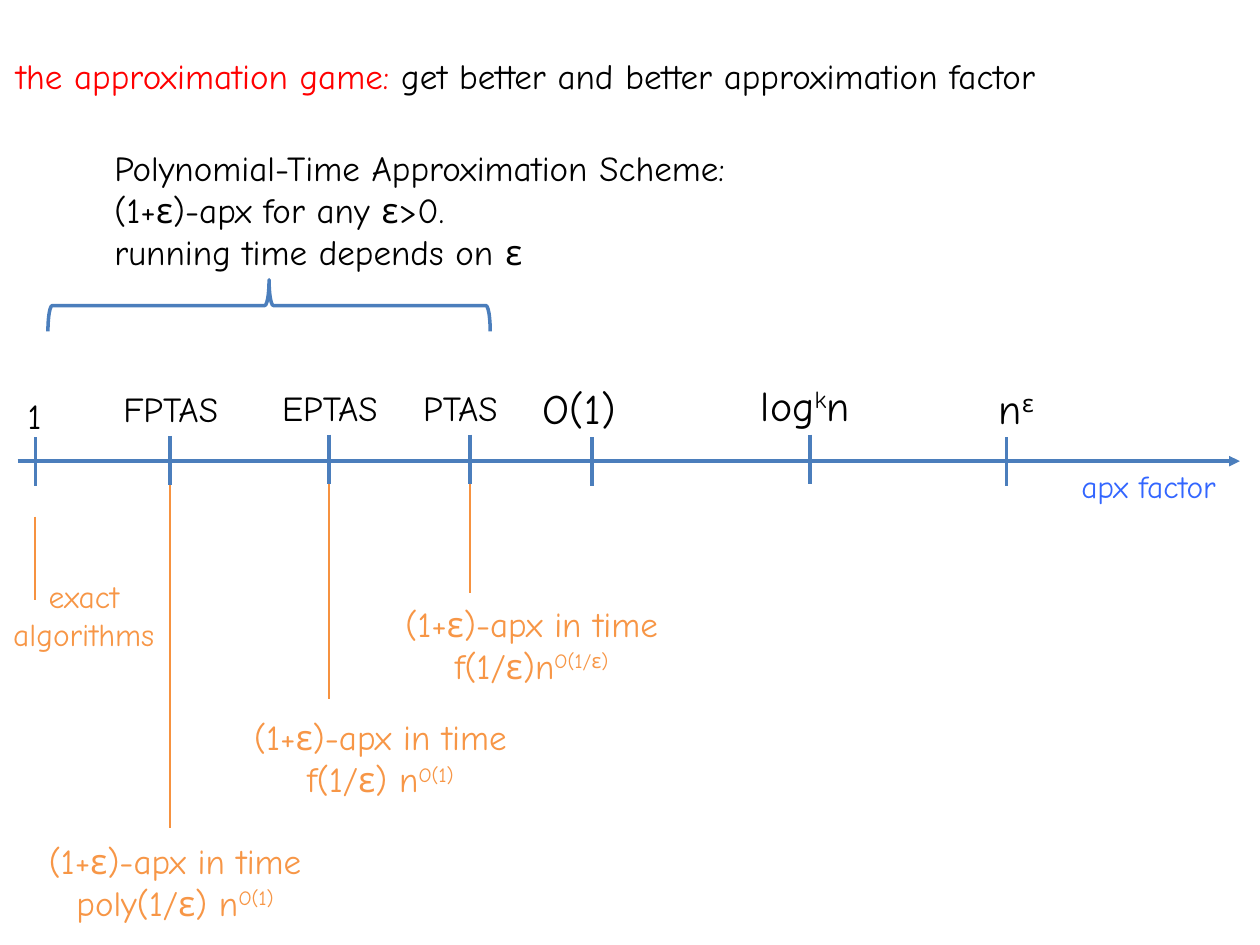
from lxml import etree
from pptx import Presentation
from pptx.dml.color import RGBColor
from pptx.enum.shapes import MSO_CONNECTOR, MSO_SHAPE
from pptx.enum.text import MSO_AUTO_SIZE, PP_ALIGN
from pptx.oxml.ns import qn
from pptx.util import Inches, Pt

FONT = "Comic Neue"
BLACK, RED, BLUE = "000000", "FF0000", "3366FF"
ORANGE, STEM, AXIS = "F79646", "F69240", "4B7EBC"
AXIS_Y = 3.66


def color(hex_string):
    return RGBColor.from_string(hex_string)


class SlideBuilder:
    def __init__(self, page):
        self.page = page

    def add_span(self, para, text, size, hex_string, raised=False):
        span = para.add_run()
        span.text = text
        span.font.name = FONT
        span.font.size = Pt(size)
        span.font.color.rgb = color(hex_string)
        if raised:
            span._r.get_or_add_rPr().set("baseline", "30000")

    def text(self, left, top, width, height, content, size=20,
             hex_string=BLACK, centered=False):
        """Add a text box; every second part between ^ marks is superscript."""
        box = self.page.shapes.add_textbox(
            Inches(left), Inches(top), Inches(width), Inches(height))
        frame = box.text_frame
        frame.word_wrap = True
        frame.auto_size = MSO_AUTO_SIZE.SHAPE_TO_FIT_TEXT
        for index, line in enumerate(content.split("\n")):
            para = frame.paragraphs[0] if index == 0 else frame.add_paragraph()
            para.alignment = PP_ALIGN.CENTER if centered else PP_ALIGN.LEFT
            for part, text in enumerate(line.split("^")):
                if text:
                    self.add_span(para, text, size, hex_string, part % 2 == 1)
        return box

    def line(self, start, end, hex_string=AXIS, width=2, arrow=False):
        connector = self.page.shapes.add_connector(
            MSO_CONNECTOR.STRAIGHT, *(Inches(value) for value in start + end))
        connector.line.color.rgb = color(hex_string)
        connector.line.width = Pt(width)
        if arrow:
            outline = connector.line._get_or_add_ln()
            etree.SubElement(outline, qn("a:tailEnd"), type="triangle")
        etree.SubElement(connector._element.spPr, qn("a:effectLst"))

    def tick(self, x, top):
        self.line((x, top), (x, top + 0.39))

    def stem(self, x, top, bottom):
        self.line((x, top), (x, bottom), STEM, 1.25)

    def top_brace(self, left, top, width, height):
        """Add a left brace turned a quarter so that it points upwards."""
        brace = self.page.shapes.add_shape(
            MSO_SHAPE.LEFT_BRACE,
            Inches(left + (width - height) / 2),
            Inches(top + (height - width) / 2),
            Inches(height), Inches(width))
        brace.rotation = 90
        brace.shadow.inherit = False
        brace.fill.background()
        brace.line.color.rgb = color(AXIS)
        brace.line.width = Pt(2)


def main():
    deck = Presentation()
    deck.slide_width, deck.slide_height = Inches(10), Inches(7.5)
    page = deck.slides.add_slide(deck.slide_layouts[6])
    slide = SlideBuilder(page)

    title = slide.text(0.03, 0.38, 9.93, 0.44, "the approximation game: ",
                       hex_string=RED)
    slide.add_span(title.text_frame.paragraphs[0],
                   "get better and better approximation factor", 20, BLACK)

    slide.text(0.81, 1.11, 5.89, 1.11,
               "Polynomial-Time Approximation Scheme:\n"
               "(1+ε)-apx for any ε>0.\n"
               "running time depends on ε")
    slide.top_brace(0.38, 2.22, 3.51, 0.41)

    slide.line((0.14, AXIS_Y), (9.84, AXIS_Y), arrow=True)
    slide.text(8.37, AXIS_Y, 1.49, 0.4, "apx factor", 18, BLUE, True)

    # tick x, tick top, label, label left, top, width, height, size
    factors = [
        (0.28, 3.47, "1", 0.12, 3.08, 0.31, 0.44, 20),
        (1.35, 3.46, "FPTAS", 0.88, 3.03, 1.11, 0.66, 20),
        (2.61, 3.45, "EPTAS", 2.14, 3.02, 1.11, 0.66, 20),
        (3.73, 3.45, "PTAS", 3.26, 3.02, 0.98, 0.66, 20),
        (4.7, 3.47, "O(1)", 4.21, 2.99, 0.98, 0.77, 24),
        (6.43, 3.45, "log^k^n", 5.94, 2.96, 0.98, 0.77, 24),
        (7.99, 3.47, "n^ε", 7.83, 2.99, 0.54, 0.5, 24),
    ]
    for x, tick_top, label, left, top, width, height, size in factors:
        slide.tick(x, tick_top)
        slide.text(left, top, width, height, label, size)

    slide.stem(0.28, 4.1, 4.76)
    slide.text(-0.28, 4.53, 1.89, 0.71, "exact algorithms", 18, ORANGE, True)

    # stem x, stem top, stem bottom, note left, note top, running time
    schemes = [
        (1.35, 3.85, 6.57, 0.14, 6.61, "poly(1/ε) n^O(1)"),
        (2.61, 3.84, 5.55, 1.77, 5.63, "f(1/ε) n^O(1)"),
        (3.73, 3.84, 4.71, 2.97, 4.73, "f(1/ε)n^O(1/ε)"),
    ]
    for x, stem_top, stem_bottom, left, top, time in schemes:
        slide.stem(x, stem_top, stem_bottom)
        slide.text(left, top, 2.5, 0.77, f"(1+ε)-apx in time {time}",
                   hex_string=ORANGE, centered=True)

    deck.save("out.pptx")


if __name__ == "__main__":
    main()
